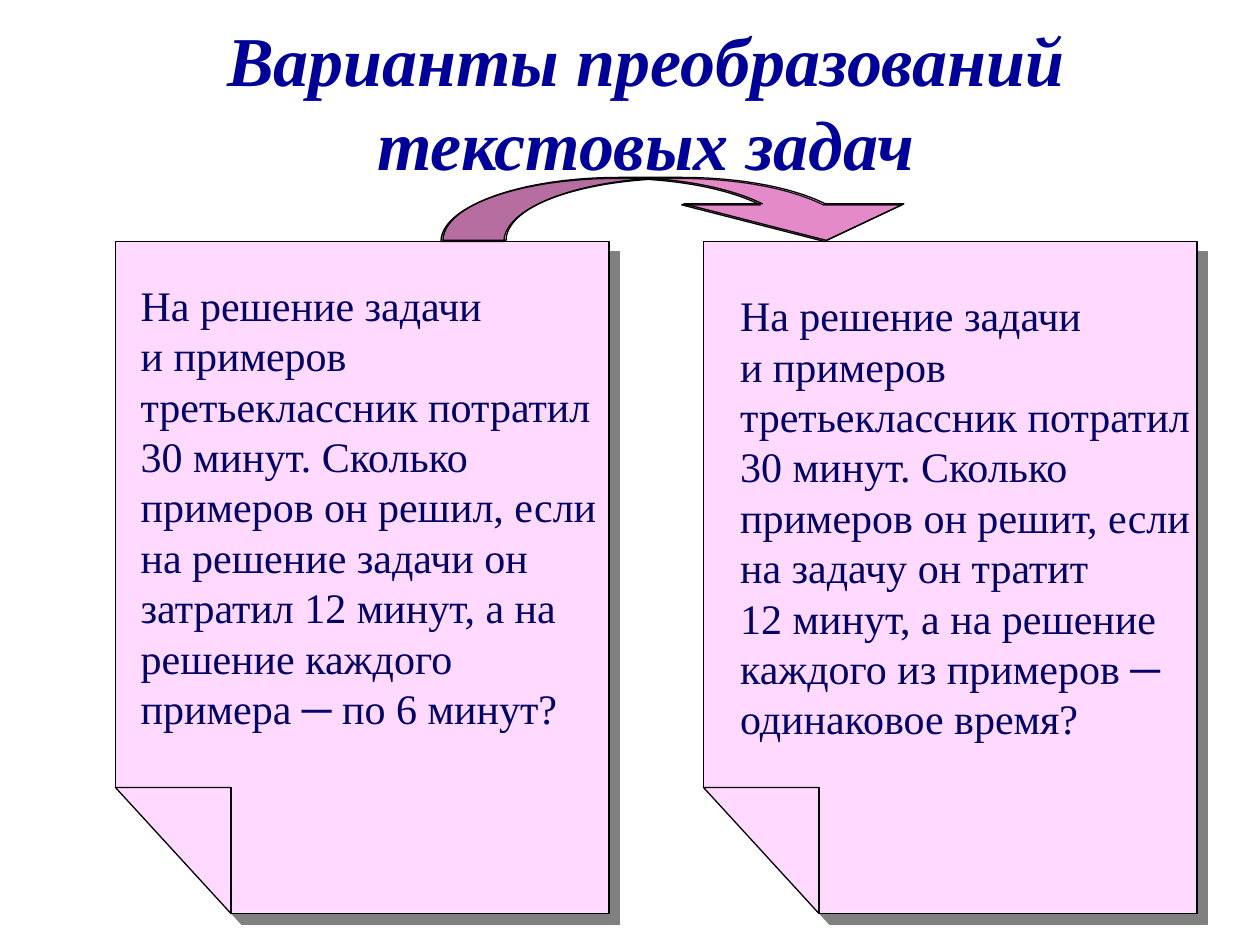
"""Build a slide comparing two versions of a word problem, joined by an arrow."""
from lxml import etree
from pptx import Presentation
from pptx.dml.color import RGBColor
from pptx.enum.shapes import MSO_SHAPE
from pptx.enum.text import MSO_ANCHOR, MSO_AUTO_SIZE, PP_ALIGN
from pptx.oxml.ns import qn
from pptx.util import Inches, Pt

CURVED_ARROW = MSO_SHAPE.CURVED_DOWN_ARROW
BOTTOM = MSO_ANCHOR.BOTTOM
GROW = MSO_AUTO_SIZE.SHAPE_TO_FIT_TEXT
NO_FIT = MSO_AUTO_SIZE.NONE
CENTER, LEFT = PP_ALIGN.CENTER, PP_ALIGN.LEFT

NAVY = RGBColor(0x00, 0x00, 0x66)
TITLE_BLUE = RGBColor(0x00, 0x00, 0x99)
NOTE_PINK = RGBColor(0xFF, 0xD9, 0xFF)
ARROW_PINK = RGBColor(0xE1, 0x87, 0xC3)
GLAZE_PINK = RGBColor(0xFF, 0xA5, 0xFF)
BLACK = RGBColor(0x00, 0x00, 0x00)
SHADOW_GREY = RGBColor(0x80, 0x80, 0x80)

COLUMNS, ROWS = 120, 90
CELL = Inches(10) // COLUMNS
FONT = "Times New Roman"
TITLE_FONT = {"name": FONT, "size": Pt(40), "bold": True, "italic": True}
BODY_FONT = {"name": FONT, "size": Pt(24)}
LEADING = 1.2
NOTE_WIDTH, NOTE_HEIGHT = 47, 63.9
NOTE_TOP = 23.2
FOLD_WIDTH, FOLD_HEIGHT = 11.1, 12.2

TITLE = "Варианты преобразований текстовых задач"
LEFT_TASK = [
    "На решение задачи",
    "и примеров третьеклассник потратил 30 минут. Сколько примеров он решил, "
    "если на решение задачи он затратил 12 минут, а на решение каждого "
    "примера ─ по 6 минут?",
]
RIGHT_TASK = [
    "На решение задачи",
    "и примеров третьеклассник потратил 30 минут. Сколько примеров он решит, "
    "если на задачу он тратит",
    "12 минут, а на решение каждого из примеров ─ одинаковое время?",
]


def cells(*lengths):
    """Convert grid lengths to EMU."""
    return [round(length * CELL) for length in lengths]


def set_attributes(target, values):
    """Set every attribute named in a dict of format values."""
    for name, value in values.items():
        setattr(target, name, value)


def write_paragraphs(text_frame, texts, font, color, alignment):
    """Fill a text frame with evenly formatted paragraphs."""
    text_frame.text = "\n".join(texts)
    for paragraph in text_frame.paragraphs:
        set_attributes(paragraph, {
            "alignment": alignment,
            "line_spacing": Pt(font["size"].pt * LEADING),
            "space_before": Pt(0),
        })
        set_attributes(paragraph.font, font)
        paragraph.font.color.rgb = color


def paint(shape, color):
    """Give a shape a solid fill, a thin black line and no theme shadow."""
    shape.shadow.inherit = False
    shape.fill.solid()
    shape.fill.fore_color.rgb = color
    shape.line.color.rgb = BLACK
    shape.line.width = Pt(0.75)


def cast_shadow(shape):
    """Add a hard grey shadow to the lower right."""
    effects = shape._element.spPr.find(qn("a:effectLst"))
    shadow = etree.SubElement(effects, qn("a:outerShdw"), blurRad="0",
                              dist=str(Pt(8.5)), dir="2700000",
                              algn="ctr", rotWithShape="0")
    etree.SubElement(shadow, qn("a:srgbClr"), val=str(SHADOW_GREY))


def add_note(slide, left):
    """Draw a sheet whose lower left corner is folded over."""
    right, bottom = left + NOTE_WIDTH, NOTE_TOP + NOTE_HEIGHT
    fold_x, fold_y = left + FOLD_WIDTH, bottom - FOLD_HEIGHT
    sheet = [(right, NOTE_TOP), (right, bottom), (fold_x, bottom),
             (fold_x, fold_y), (left, fold_y)]
    fold = [(fold_x, fold_y), (fold_x, bottom)]
    builder = slide.shapes.build_freeform(left, NOTE_TOP, scale=CELL)
    builder.add_line_segments(sheet, close=True)
    builder.move_to(left, fold_y)
    builder.add_line_segments(fold, close=True)
    note = builder.convert_to_shape()
    paint(note, NOTE_PINK)
    cast_shadow(note)


def add_arrow(slide, left, top, color, opacity=100):
    """Draw the curved arrow that leads from one note to the other."""
    arrow = slide.shapes.add_shape(CURVED_ARROW, *cells(left, top, 47, 6))
    for index, value in enumerate((1.927, 3.493, 0.58)):
        arrow.adjustments[index] = value
    paint(arrow, color)
    if opacity < 100:
        tint = arrow._element.spPr.find(qn("a:solidFill"))[0]
        etree.SubElement(tint, qn("a:alpha"), val=str(opacity * 1000))


def add_task(slide, box, indent, texts):
    """Place the wording of a problem on its note."""
    text_frame = slide.shapes.add_textbox(*cells(*box)).text_frame
    set_attributes(text_frame, {"word_wrap": True, "auto_size": GROW,
                                "margin_left": Inches(indent)})
    write_paragraphs(text_frame, texts, BODY_FONT, NAVY, LEFT)


def add_title(slide):
    """Move and format the title placeholder."""
    title = slide.shapes.title
    bounds = cells(3, 9.1, 117, 8.8)
    set_attributes(title, dict(zip(("left", "top", "width", "height"), bounds)))
    set_attributes(title.text_frame, {
        "word_wrap": True, "auto_size": NO_FIT,
        "vertical_anchor": BOTTOM, "margin_bottom": Inches(0.03),
    })
    write_paragraphs(title.text_frame, [TITLE], TITLE_FONT, TITLE_BLUE, CENTER)


def main():
    """Assemble and save the slide."""
    presentation = Presentation()
    presentation.slide_width, presentation.slide_height = cells(COLUMNS, ROWS)
    slide = presentation.slides.add_slide(presentation.slide_layouts[5])
    for left in (11.2, 67.2):
        add_note(slide, left)
    add_arrow(slide, 42, 17, ARROW_PINK)
    add_title(slide)
    add_task(slide, (11, 26, 47, 45), 0.2, LEFT_TASK)
    add_task(slide, (67, 27, 48, 45), 0.29, RIGHT_TASK)
    add_arrow(slide, 42.2, 16.9, GLAZE_PINK, opacity=10)
    presentation.save("out.pptx")


if __name__ == "__main__":
    main()
